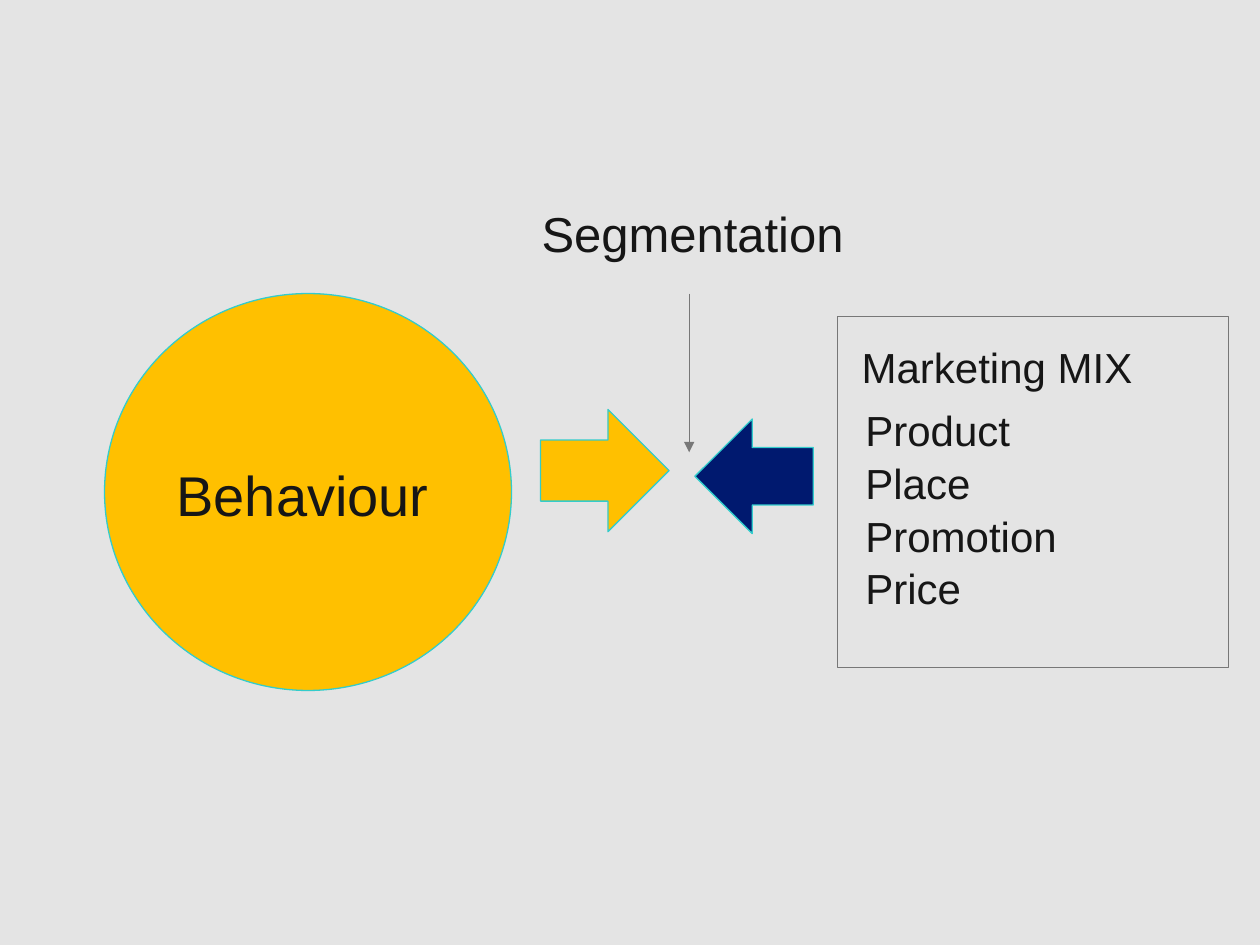
from dataclasses import dataclass

from lxml.etree import SubElement
from pptx import Presentation
from pptx.dml.color import RGBColor as RGB
from pptx.enum.shapes import MSO_CONNECTOR as Link, MSO_SHAPE as Shape
from pptx.enum.text import MSO_ANCHOR as Anchor, MSO_AUTO_SIZE as Fit
from pptx.oxml.ns import qn
from pptx.util import Inches, Pt


@dataclass(frozen=True)
class Theme:
    font: str = "Arial"
    back: str = "E4E4E4"
    ink: str = "161616"
    gold: str = "FFC000"
    navy: str = "00196F"
    teal: str = "33CCCC"
    gray: str = "777777"
    line: float = 0.75
    small: int = 24
    mid: int = 28
    large: int = 32


def write(frame, text, *, size, color, font, anchor=Anchor.TOP, fit=Fit.NONE):
    """Fill a text frame, one paragraph per line of text."""
    frame.word_wrap = False
    frame.auto_size = fit
    frame.vertical_anchor = anchor
    frame.text = text
    for para in frame.paragraphs:
        para.line_spacing = 1.05
        for run in para.runs:
            run.font.name = font
            run.font.size = Pt(size)
            run.font.color.rgb = RGB.from_string(color)


class Board:
    def __init__(self, slide, theme):
        self.slide, self.theme = slide, theme
        fill = slide.background.fill
        fill.solid()
        fill.fore_color.rgb = RGB.from_string(theme.back)

    def edge(self, item, color):
        item.line.color.rgb = RGB.from_string(color)
        item.line.width = Pt(self.theme.line)

    def shape(self, kind, box, fill=None, line=None, turn=0):
        item = self.slide.shapes.add_shape(kind, *map(Inches, box))
        item.shadow.inherit = False
        item.rotation = turn
        if fill:
            item.fill.solid()
            item.fill.fore_color.rgb = RGB.from_string(fill)
        else:
            item.fill.background()
        self.edge(item, line or self.theme.teal)
        return item

    def label(self, text, box, size):
        item = self.slide.shapes.add_textbox(*map(Inches, box))
        write(item.text_frame, text, size=size, color=self.theme.ink,
              font=self.theme.font, fit=Fit.SHAPE_TO_FIT_TEXT)

    def arrow(self, start, end):
        item = self.slide.shapes.add_connector(
            Link.STRAIGHT, *map(Inches, (*start, *end)))
        self.edge(item, self.theme.gray)
        SubElement(item.line._get_or_add_ln(), qn("a:tailEnd"), type="triangle")
        SubElement(item._element.spPr, qn("a:effectLst"))


def main():
    deck = Presentation()
    deck.slide_width, deck.slide_height = Inches(10), Inches(7.5)
    theme = Theme()
    board = Board(deck.slides.add_slide(deck.slide_layouts[6]), theme)

    # Behaviour circle
    circle = board.shape(Shape.OVAL, (0.83, 2.33, 3.23, 3.15), theme.gold)
    write(circle.text_frame, "Behaviour", size=theme.large, color=theme.ink,
          font=theme.font, anchor=Anchor.MIDDLE)
    circle.text_frame.paragraphs[0].alignment = 1

    # Marketing mix
    board.label("Product\nPlace\nPromotion\nPrice",
                (6.77, 3.14, 1.74, 1.72), theme.small)
    board.label("Marketing MIX", (6.74, 2.64, 2.37, 0.5), theme.small)

    # Facing arrows
    board.shape(Shape.RIGHT_ARROW, (4.29, 3.25, 1.02, 0.97), theme.gold)
    board.shape(Shape.DOWN_ARROW, (5.53, 3.31, 0.91, 0.94), theme.navy, turn=90)

    # Segmentation label, mix frame and pointer
    board.label("Segmentation", (4.2, 1.54, 2.63, 0.57), theme.mid)
    board.shape(Shape.RECTANGLE, (6.65, 2.51, 3.1, 2.79), line=theme.gray)
    board.arrow((5.47, 2.33), (5.47, 3.59))

    deck.save("out.pptx")


if __name__ == "__main__":
    main()
